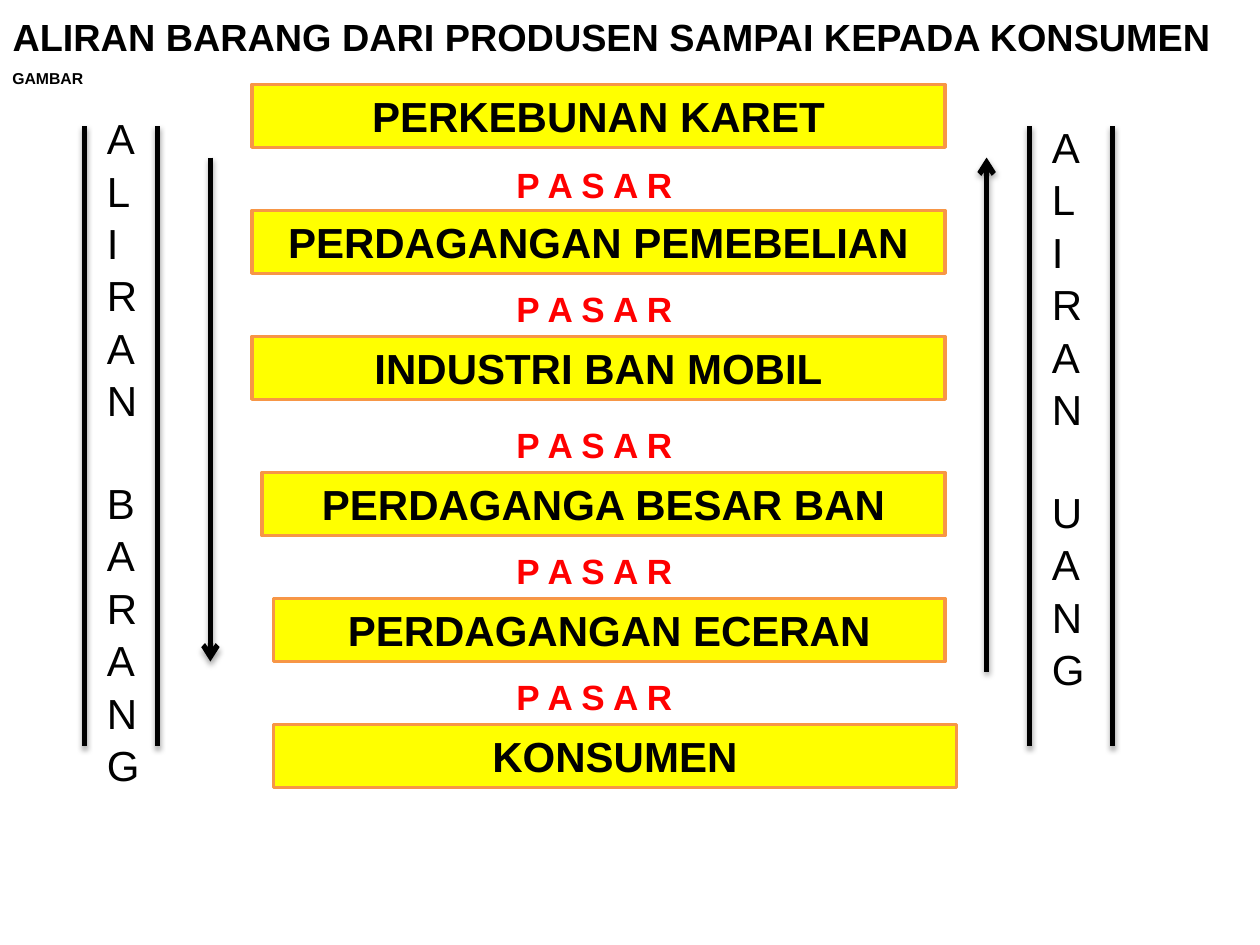
import pptx
import pptx.util
import pptx.oxml
import pptx.dml.color
import pptx.enum.text
import pptx.enum.shapes

Inches, Pt = pptx.util.Inches, pptx.util.Pt
ALIGN = pptx.enum.text.PP_ALIGN
ANCHOR = pptx.enum.text.MSO_ANCHOR
AUTO = pptx.enum.text.MSO_AUTO_SIZE

COLORS = {"text": "000000", "market": "FF0000", "box": "FFFF00", "border": "F79646"}

TITLE = "ALIRAN BARANG DARI PRODUSEN SAMPAI KEPADA KONSUMEN"
CAPTION = "GAMBAR"
MARKET = "P A S A R"
STAGES = [
    ("PERKEBUNAN KARET", 2, 0.67, 5.5),
    ("PERDAGANGAN PEMEBELIAN", 2, 1.67, 5.5),
    ("INDUSTRI BAN MOBIL", 2, 2.67, 5.5),
    ("PERDAGANGA BESAR BAN", 2.08, 3.75, 5.42),
    ("PERDAGANGAN ECERAN", 2.17, 4.75, 5.33),
    ("KONSUMEN", 2.17, 5.75, 5.42),
]
MARKET_TOPS = [1.25, 2.23, 3.31, 4.31, 5.31]
FLOWS = [
    (["ALIRAN", "BARANG"], 0.75, 0.83, 5.35),
    (["ALIRAN", "UANG"], 8.25, 0.9, 4.54),
]
RAILS = [0.67, 1.25, 8.17, 8.83]
ARROWS = [(1.67, 1.25, 5.25), (7.83, 5.33, 1.25)]

NS = 'xmlns:a="http://schemas.openxmlformats.org/drawingml/2006/main"'
SHADOW = (
    f'<a:effectLst {NS}><a:outerShdw blurRad="40000" dist="23000" dir="5400000" rotWithShape="0">'
    '<a:srgbClr val="000000"><a:alpha val="35000"/></a:srgbClr></a:outerShdw></a:effectLst>'
)


def rgb(name):
    return pptx.dml.color.RGBColor.from_string(COLORS[name])


def write(tf, lines, size, color="text", bold=True, frame=None, para=None):
    for key, value in (frame or {}).items():
        setattr(tf, key, value)
    for i, line in enumerate(lines):
        p = tf.paragraphs[0] if i == 0 else tf.add_paragraph()
        for key, value in (para or {}).items():
            setattr(p, key, value)
        r = p.add_run()
        r.text = line
        for key, value in {"name": "Arial", "size": Pt(size), "bold": bold}.items():
            setattr(r.font, key, value)
        r.font.color.rgb = rgb(color)


def add_text(s, box, *args, **kwargs):
    tf = s.shapes.add_textbox(*map(Inches, box)).text_frame
    write(tf, *args, **kwargs)
    return tf


def add_line(s, x, y1, y2, arrow=False):
    kind = pptx.enum.shapes.MSO_CONNECTOR.STRAIGHT
    c = s.shapes.add_connector(kind, *map(Inches, (x, y1, x, y2)))
    c.line.color.rgb = rgb("text")
    c.line.width = Pt(3)
    if arrow:
        c.line._get_or_add_ln().append(pptx.oxml.parse_xml(f'<a:tailEnd {NS} type="arrow"/>'))
    c._element.spPr.append(pptx.oxml.parse_xml(SHADOW))


def main():
    prs = pptx.Presentation()
    prs.slide_width, prs.slide_height = Inches(10), Inches(7.5)
    s = prs.slides.add_slide(prs.slide_layouts[5])

    title = s.shapes.title
    place = {"left": 0, "top": 0, "width": Inches(10), "height": Inches(0.58)}
    for key, value in place.items():
        setattr(title, key, value)
    write(title.text_frame, [TITLE], 21.6, para={"alignment": ALIGN.LEFT},
          frame={"vertical_anchor": ANCHOR.MIDDLE, "auto_size": AUTO.NONE})

    label = {"word_wrap": False, "auto_size": AUTO.SHAPE_TO_FIT_TEXT}
    add_text(s, (0, 0.5, 0.77, 0.25), [CAPTION], 9, frame=label, para={"space_before": Pt(1.8)})

    for name, x, y, w in STAGES:
        sp = s.shapes.add_shape(pptx.enum.shapes.MSO_SHAPE.RECTANGLE,
                                *map(Inches, (x, y, w, 0.5)))
        sp.shadow.inherit = False
        sp.fill.solid()
        sp.fill.fore_color.rgb = rgb("box")
        sp.line.color.rgb = rgb("border")
        sp.line.width = Pt(2)
        write(sp.text_frame, [name], 24, frame={"vertical_anchor": ANCHOR.MIDDLE},
              para={"alignment": ALIGN.CENTER})

    for y in MARKET_TOPS:
        add_text(s, (4, y, 1.45, 0.44), [MARKET], 20, "market", frame=label)

    for words, x, y, h in FLOWS:
        tf = add_text(s, (x, y, 0.42, h), words, 24, bold=False,
                      frame={"word_wrap": True, "auto_size": AUTO.SHAPE_TO_FIT_TEXT},
                      para={"line_spacing": 1.04})
        tf.paragraphs[1].space_before = Pt(28.8)

    for x in RAILS:
        add_line(s, x, 1, 5.92)
    for x, start, end in ARROWS:
        add_line(s, x, start, end, arrow=True)

    prs.save("out.pptx")


if __name__ == "__main__":
    main()
